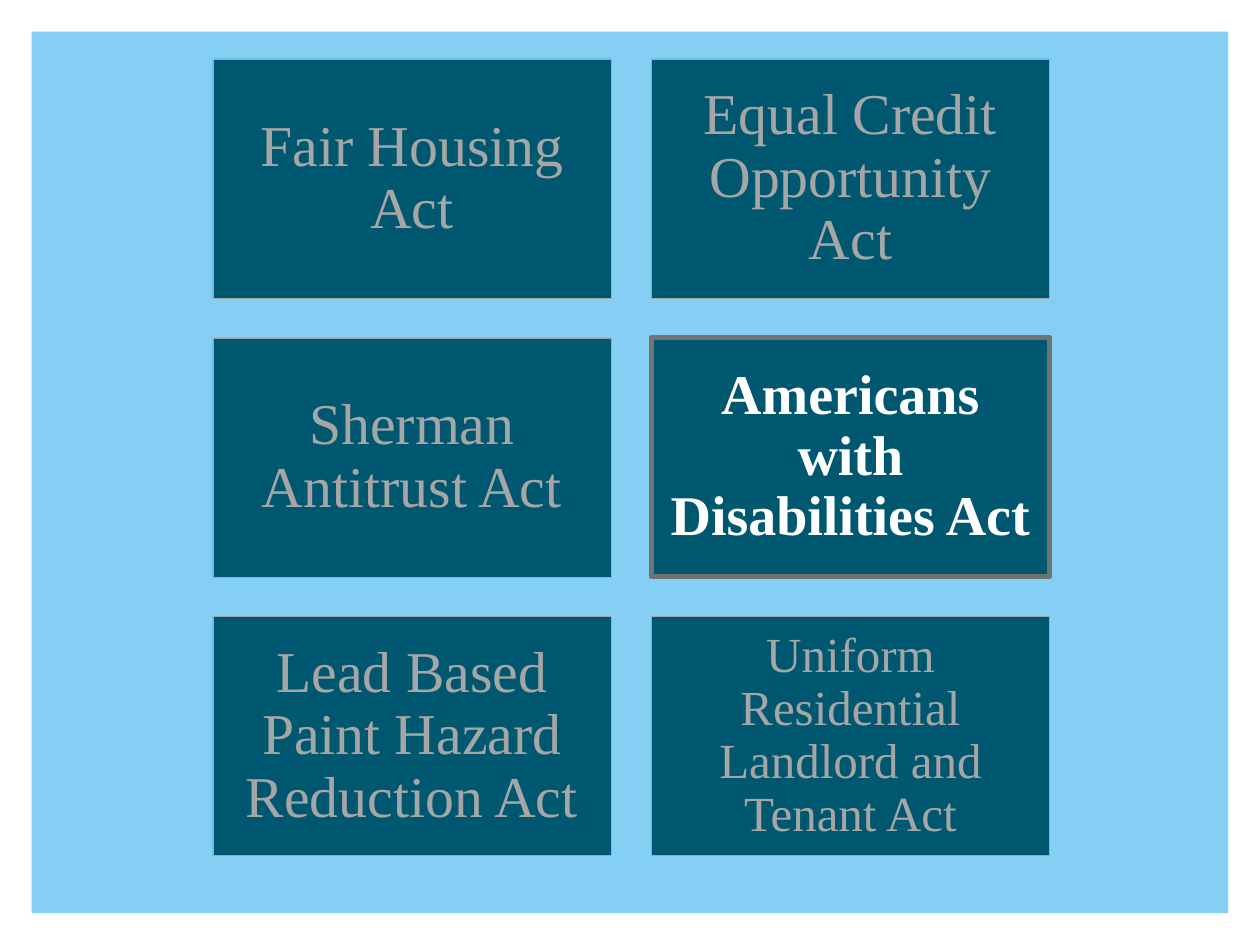
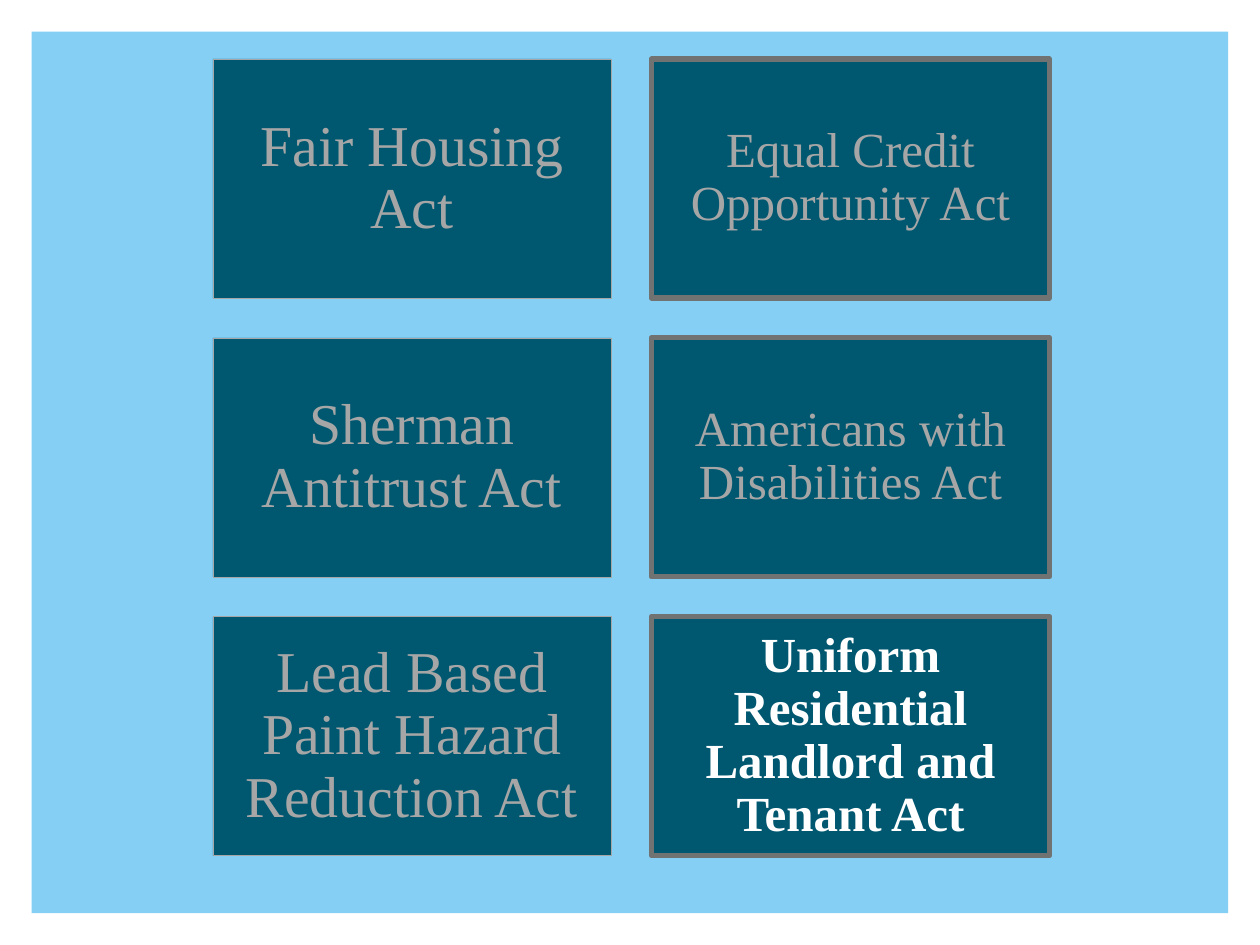
"""Build two slides of a grid of housing laws, each with one law in focus."""
from dataclasses import dataclass

from pptx import Presentation
from pptx import util as u
from pptx.dml.color import RGBColor
from pptx.enum import shapes, text

COLOURS = {
    "panel": "85CFF5",
    "card": "005870",
    "muted": "A6A6A6",
    "frame": "707372",
    "focus": "FFFFFF",
}
FONT = "Times New Roman"
COLUMNS = 2
GRID_LEFT, GRID_TOP = 4.29, 1.19
CARD_WIDTH, CARD_HEIGHT = 8.03, 4.82
COLUMN_STEP, ROW_STEP = 8.84, 5.62
MARGIN = 0.64


@dataclass(frozen=True)
class Law:
    """A card of the grid."""

    name: str
    size: int = 33
    framed: bool = False
    focus: bool = False
    inset: float = 0.35


FAIR_HOUSING = Law("Fair Housing Act")
ANTITRUST = Law("Sherman Antitrust Act")
LEAD_PAINT = Law("Lead Based Paint Hazard Reduction Act")
CREDIT = "Equal Credit Opportunity Act"
DISABILITIES = "Americans with Disabilities Act"
TENANT = "Uniform Residential Landlord and Tenant Act"

PAGES = [
    [
        FAIR_HOUSING, Law(CREDIT),
        ANTITRUST, Law(DISABILITIES, 32, framed=True, focus=True),
        LEAD_PAINT, Law(TENANT, 28, inset=0.3),
    ],
    [
        FAIR_HOUSING, Law(CREDIT, 28, framed=True),
        ANTITRUST, Law(DISABILITIES, 28, framed=True),
        LEAD_PAINT, Law(TENANT, 28, framed=True, focus=True),
    ],
]


def colour(name: str) -> RGBColor:
    """Return a named colour."""
    return RGBColor.from_string(COLOURS[name])


def apply(target: object, values: dict) -> None:
    """Set each attribute of the target from a dict."""
    for name, value in values.items():
        setattr(target, name, value)


def add_box(page, left: float, top: float, width: float, height: float, fill: str):
    """Add a flat filled rectangle without a line, measured in centimetres."""
    lengths = (u.Cm(value) for value in (left, top, width, height))
    box = page.shapes.add_shape(shapes.MSO_SHAPE.RECTANGLE, *lengths)
    box.shadow.inherit = False
    box.fill.solid()
    box.fill.fore_color.rgb = colour(fill)
    box.line.fill.background()
    return box


def add_card(page, law: Law, left: float, top: float) -> None:
    """Add one law card with its name centred."""
    box = add_box(page, left, top, CARD_WIDTH, CARD_HEIGHT, "card")
    box.line.color.rgb = colour("frame" if law.framed else "muted")
    box.line.width = u.Pt(3 if law.framed else 0.25)
    frame = box.text_frame
    sides = ("left", "top", "right", "bottom")
    apply(frame, {f"margin_{side}": u.Cm(law.inset) for side in sides})
    apply(frame, {"word_wrap": True, "vertical_anchor": text.MSO_ANCHOR.MIDDLE})
    para = frame.paragraphs[0]
    apply(para, {"alignment": text.PP_ALIGN.CENTER, "line_spacing": 0.9})
    span = para.add_run()
    span.text = law.name
    apply(span.font, {"name": FONT, "size": u.Pt(law.size), "bold": law.focus})
    span.font.color.rgb = colour("focus" if law.focus else "muted")


def add_page(deck, laws: list[Law]) -> None:
    """Add a slide with the panel and the grid of cards."""
    page = deck.slides.add_slide(deck.slide_layouts[6])
    width, height = deck.slide_width.cm, deck.slide_height.cm
    add_box(page, MARGIN, MARGIN, width - 2 * MARGIN, height - 2 * MARGIN, "panel")
    for index, law in enumerate(laws):
        row, column = divmod(index, COLUMNS)
        add_card(page, law, GRID_LEFT + column * COLUMN_STEP, GRID_TOP + row * ROW_STEP)


def main() -> None:
    """Build and save the deck."""
    deck = Presentation()
    apply(deck, {"slide_width": u.Cm(25.4), "slide_height": u.Cm(19.05)})
    for laws in PAGES:
        add_page(deck, laws)
    deck.save("out.pptx")


if __name__ == "__main__":
    main()
